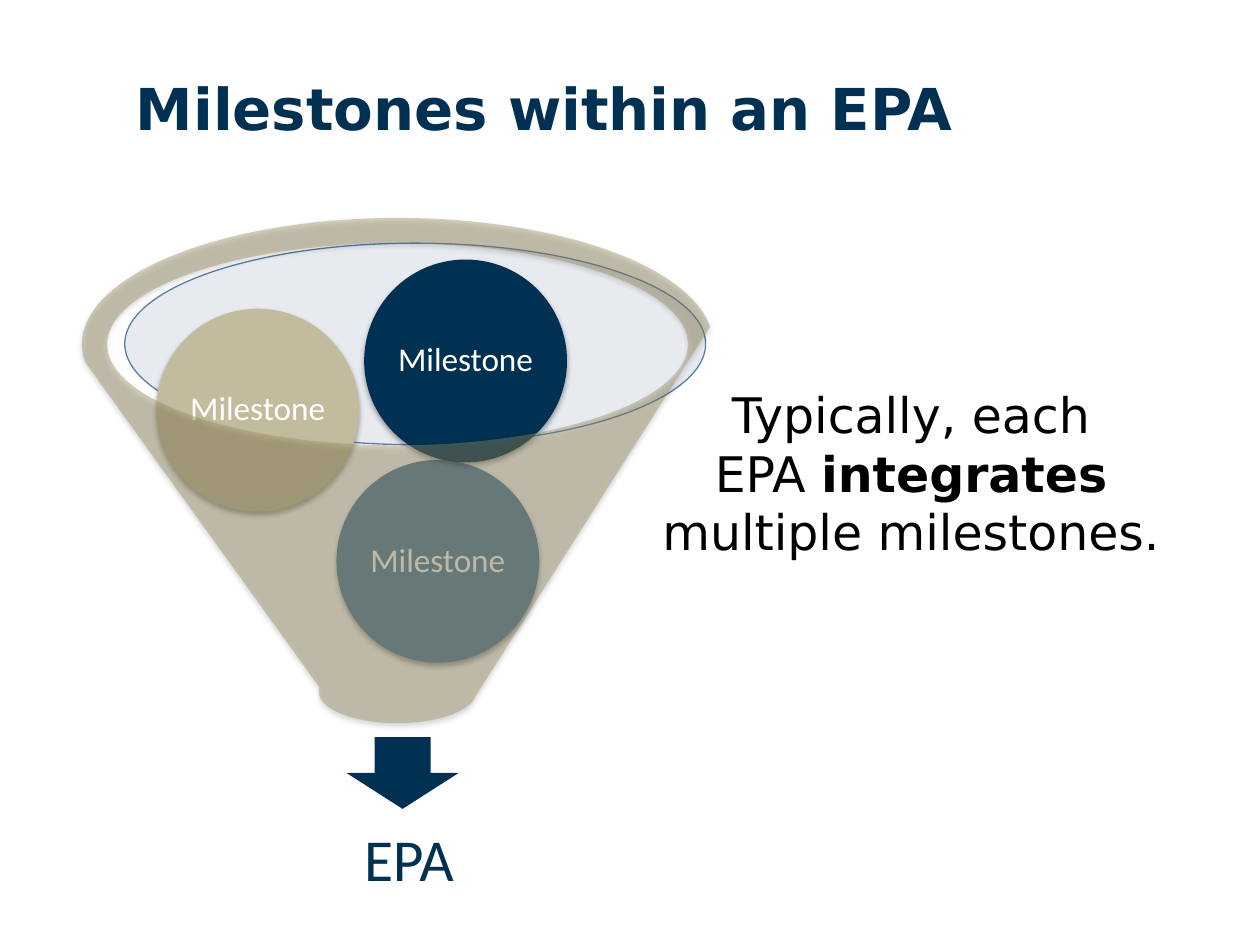
import lxml.etree
import pptx
import pptx.dml.color
import pptx.enum.shapes
import pptx.enum.text
import pptx.oxml.ns
import pptx.util

RGBColor = pptx.dml.color.RGBColor
Preset = pptx.enum.shapes.MSO_SHAPE
Align = pptx.enum.text.PP_ALIGN
Anchor = pptx.enum.text.MSO_ANCHOR
Fit = pptx.enum.text.MSO_AUTO_SIZE
qn = pptx.oxml.ns.qn

NAVY = RGBColor(0x00, 0x31, 0x52)
STEEL = RGBColor(0x55, 0x7F, 0xA6)
MIST = RGBColor(0xC3, 0xCC, 0xD8)
SAND = RGBColor(0xC3, 0xBB, 0x9E)
OLIVE = RGBColor(0x99, 0x8D, 0x5F)
WHITE = RGBColor(0xFF, 0xFF, 0xFF)
BLACK = RGBColor(0x00, 0x00, 0x00)

COLUMNS, ROWS = 100, 75
BALL = 16.1


def set_all(target, values):
    for name, value in values.items():
        setattr(target, name, value)


class SlideBuilder:
    title_font = {"name": "DejaVu Sans", "size": pptx.util.Pt(33), "bold": True}
    body_font = {"name": "DejaVu Sans", "size": pptx.util.Pt(28)}
    ball_font = {"name": "Calibri", "size": pptx.util.Pt(19)}
    result_font = {"name": "Calibri", "size": pptx.util.Pt(34)}

    def __init__(self, deck):
        self.page = deck.slides.add_slide(deck.slide_layouts[6])
        self.column = deck.slide_width / COLUMNS
        self.row = deck.slide_height / ROWS

    def place(self, left, top, width, height):
        return (round(left * self.column), round(top * self.row),
                round(width * self.column), round(height * self.row))

    def fill_text(self, shape, lines, font, color, align=Align.CENTER, inset=0.1,
                  spacing=1.0, anchor=Anchor.MIDDLE):
        margin = pptx.util.Inches(inset)
        frame = shape.text_frame
        set_all(frame, {"word_wrap": True, "vertical_anchor": anchor,
                        "margin_left": margin, "margin_right": margin})
        if inset != 0.1:
            set_all(frame, {"margin_top": margin, "margin_bottom": margin})
        para = frame.paragraphs[0]
        set_all(para, {"alignment": align, "line_spacing": spacing})
        for index, line in enumerate(lines):
            if index:
                para.add_line_break()
            for text, bold in line:
                span = para.add_run()
                span.text = text
                set_all(span.font, font)
                span.font.color.rgb = color
                if bold:
                    span.font.bold = True

    def text(self, area, lines, font, color, **layout):
        box = self.page.shapes.add_textbox(*self.place(*area))
        self.fill_text(box, lines, font, color, **layout)
        return box

    def shape(self, preset, area, fill, opacity=100, line=None, shadow=None):
        shape = self.page.shapes.add_shape(preset, *self.place(*area))
        shape.fill.solid()
        shape.fill.fore_color.rgb = fill
        properties = shape._element.spPr
        if opacity < 100:
            tint = properties.find(qn("a:solidFill")).find(qn("a:srgbClr"))
            lxml.etree.SubElement(tint, qn("a:alpha"), val=str(opacity * 1000))
        if line:
            shape.line.width = pptx.util.Pt(0.75)
            shape.line.color.rgb = line
        else:
            shape.line.fill.background()
        shape.shadow.inherit = False
        if shadow:
            self.cast(properties.find(qn("a:effectLst")), *shadow)
        return shape

    def cast(self, effects, opacity, distance):
        outer = lxml.etree.SubElement(
            effects, qn("a:outerShdw"), blurRad=str(int(pptx.util.Pt(3.1))),
            dist=str(int(pptx.util.Pt(distance))), dir="5400000", rotWithShape="0")
        tint = lxml.etree.SubElement(outer, qn("a:srgbClr"), val=str(BLACK))
        lxml.etree.SubElement(tint, qn("a:alpha"), val=str(opacity * 1000))

    def ball(self, left, top, fill):
        ball = self.shape(Preset.OVAL, (left, top, BALL, BALL), fill, shadow=(35, 1.8))
        self.fill_text(ball, [[("Milestone", False)]], self.ball_font, WHITE,
                       inset=0.03, spacing=0.9)


def main():
    deck = pptx.Presentation()
    deck.slide_width = pptx.util.Inches(10)
    deck.slide_height = pptx.util.Inches(7.5)
    builder = SlideBuilder(deck)

    builder.text((9.8, 2.3, 86.2, 12.5), [[("Milestones within an EPA", False)]],
                 builder.title_font, NAVY, align=Align.LEFT)
    builder.shape(Preset.OVAL, (9.9, 19.3, 46.1, 16), MIST, opacity=40, line=STEEL)
    builder.shape(Preset.DOWN_ARROW, (27.5, 58.5, 8.9, 5.7), NAVY)
    builder.text((11, 63.1, 42.9, 10.7), [[("EPA", False)]],
                 builder.result_font, NAVY, inset=0.26, spacing=0.9)
    for left, top, fill in ((26.7, 36.5, STEEL), (12.4, 24.5, SAND), (28.9, 20.6, NAVY)):
        builder.ball(left, top, fill)
    builder.shape(Preset.FUNNEL, (6.5, 17.3, 50.1, 40.1), OLIVE, opacity=40, shadow=(38, 1.6))
    summary = builder.text(
        (47.3, 30, 50, 15.1),
        [[("Typically, each", False)],
         [("EPA ", False), ("integrates", True)],
         [("multiple milestones.", False)]],
        builder.body_font, BLACK, anchor=Anchor.TOP)
    summary.text_frame.auto_size = Fit.SHAPE_TO_FIT_TEXT

    deck.save("out.pptx")


if __name__ == "__main__":
    main()
